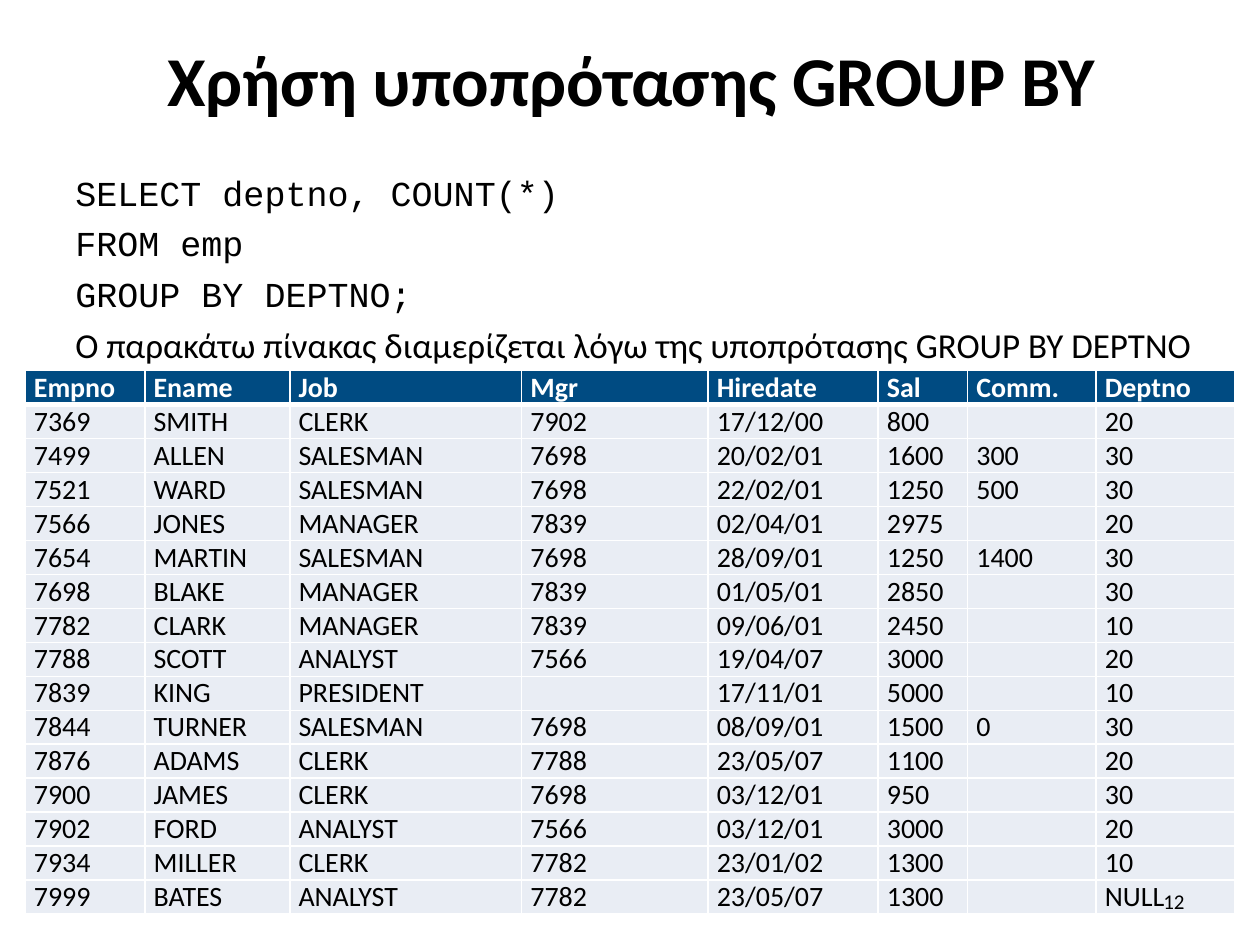
from lxml.etree import SubElement
from pptx import Presentation
from pptx.dml.color import RGBColor
from pptx.enum.text import MSO_ANCHOR, PP_ALIGN
from pptx.oxml.ns import qn
from pptx.util import Inches, Pt

BLACK = RGBColor(0x00, 0x00, 0x00)
WHITE = RGBColor(0xFF, 0xFF, 0xFF)
NAVY = RGBColor(0x00, 0x4B, 0x82)
PALE = RGBColor(0xE9, 0xED, 0xF4)


def write(paragraph, text, size=16, font="Calibri", color=BLACK, bold=False,
          align=PP_ALIGN.LEFT, before=0):
    paragraph.alignment = align
    paragraph.space_before = Pt(before)
    if not text:
        SubElement(paragraph._p, qn("a:endParaRPr"), sz=str(size * 100))
        return
    run = paragraph.add_run()
    run.text = text
    run.font.size = Pt(size)
    run.font.name = font
    run.font.bold = bold
    run.font.color.rgb = color


def text_frame(left, top, width, height, anchor=MSO_ANCHOR.TOP):
    box = slide.shapes.add_textbox(Inches(left), Inches(top), Inches(width), Inches(height))
    box.text_frame.word_wrap = True
    box.text_frame.vertical_anchor = anchor
    return box.text_frame


prs = Presentation()
prs.slide_width = Inches(10)
prs.slide_height = Inches(7.5)
slide = prs.slides.add_slide(prs.slide_layouts[6])

title = text_frame(0.51, 0.13, 9, 0.99, MSO_ANCHOR.MIDDLE)
write(title.paragraphs[0], "Χρήση υποπρότασης GROUP BY", size=40, bold=True,
      align=PP_ALIGN.CENTER)

query = text_frame(0.5, 1.31, 9.5, 1.73)
query_lines = [
    ("SELECT deptno, COUNT(*)", "Courier New"),
    ("FROM emp", "Courier New"),
    ("GROUP BY DEPTNO;", "Courier New"),
    ("Ο παρακάτω πίνακας διαμερίζεται λόγω της υποπρότασης GROUP BY DEPTNO", "Calibri"),
]
for index, (line, font) in enumerate(query_lines):
    paragraph = query.add_paragraph() if index else query.paragraphs[0]
    write(paragraph, line, size=20, font=font, before=5)

employees = """Empno,Ename,Job,Mgr,Hiredate,Sal,Comm.,Deptno
7369,SMITH,CLERK,7902,17/12/00,800,,20
7499,ALLEN,SALESMAN,7698,20/02/01,1600,300,30
7521,WARD,SALESMAN,7698,22/02/01,1250,500,30
7566,JONES,MANAGER,7839,02/04/01,2975,,20
7654,MARTIN,SALESMAN,7698,28/09/01,1250,1400,30
7698,BLAKE,MANAGER,7839,01/05/01,2850,,30
7782,CLARK,MANAGER,7839,09/06/01,2450,,10
7788,SCOTT,ANALYST,7566,19/04/07,3000,,20
7839,KING,PRESIDENT,,17/11/01,5000,,10
7844,TURNER,SALESMAN,7698,08/09/01,1500,0,30
7876,ADAMS,CLERK,7788,23/05/07,1100,,20
7900,JAMES,CLERK,7698,03/12/01,950,,30
7902,FORD,ANALYST,7566,03/12/01,3000,,20
7934,MILLER,CLERK,7782,23/01/02,1300,,10
7999,BATES,ANALYST,7782,23/05/07,1300,,NULL"""
rows = [line.split(",") for line in employees.splitlines()]
column_widths = [0.95, 1.15, 1.84, 1.48, 1.35, 0.71, 1.02, 1.1]

employee_table = slide.shapes.add_table(
    len(rows), len(column_widths), Inches(0.2), Inches(2.94), Inches(9.6), Inches(4.27)).table
employee_table.horz_banding = False
for column, width in zip(employee_table.columns, column_widths):
    column.width = Inches(width)

for row_index, values in enumerate(rows):
    header = row_index == 0
    employee_table.rows[row_index].height = Inches(0.27)
    for column_index, value in enumerate(values):
        cell = employee_table.cell(row_index, column_index)
        cell.margin_left = cell.margin_right = Inches(0.07)
        cell.margin_top = cell.margin_bottom = 0
        properties = cell._tc.get_or_add_tcPr()
        for side in ("L", "R", "T", "B"):
            heavy = (header and side == "B") or (row_index == 1 and side == "T")
            border = SubElement(properties, qn(f"a:ln{side}"), w=str(Pt(3 if heavy else 1)))
            border_fill = SubElement(border, qn("a:solidFill"))
            SubElement(border_fill, qn("a:srgbClr"), val=str(WHITE))
        cell.fill.solid()
        cell.fill.fore_color.rgb = NAVY if header else PALE
        write(cell.text_frame.paragraphs[0], value, bold=header,
              color=WHITE if header else BLACK)

page_number = text_frame(7.17, 6.95, 2.33, 0.4, MSO_ANCHOR.MIDDLE)
write(page_number.paragraphs[0], "12", size=12, align=PP_ALIGN.RIGHT)

prs.save("out.pptx")
